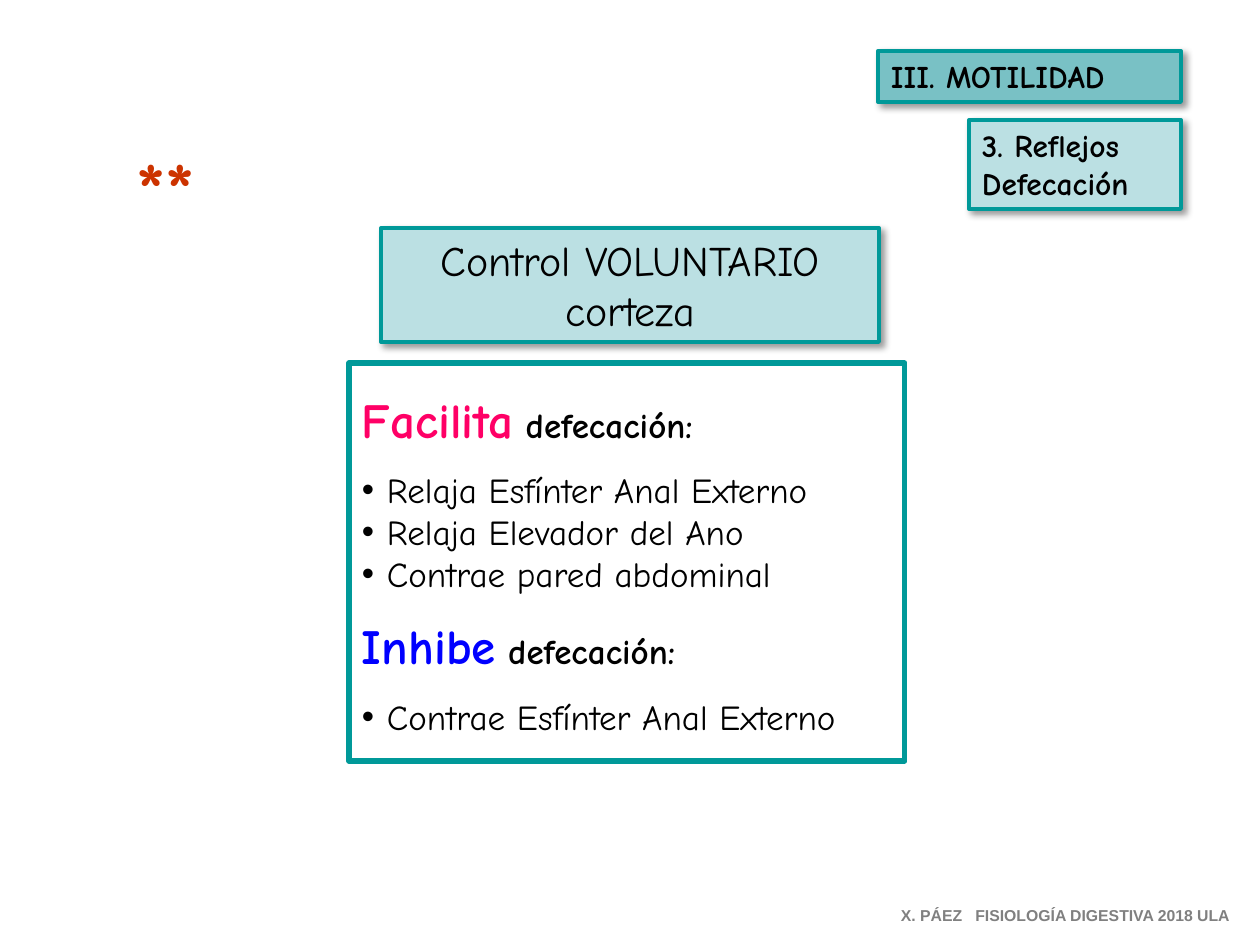
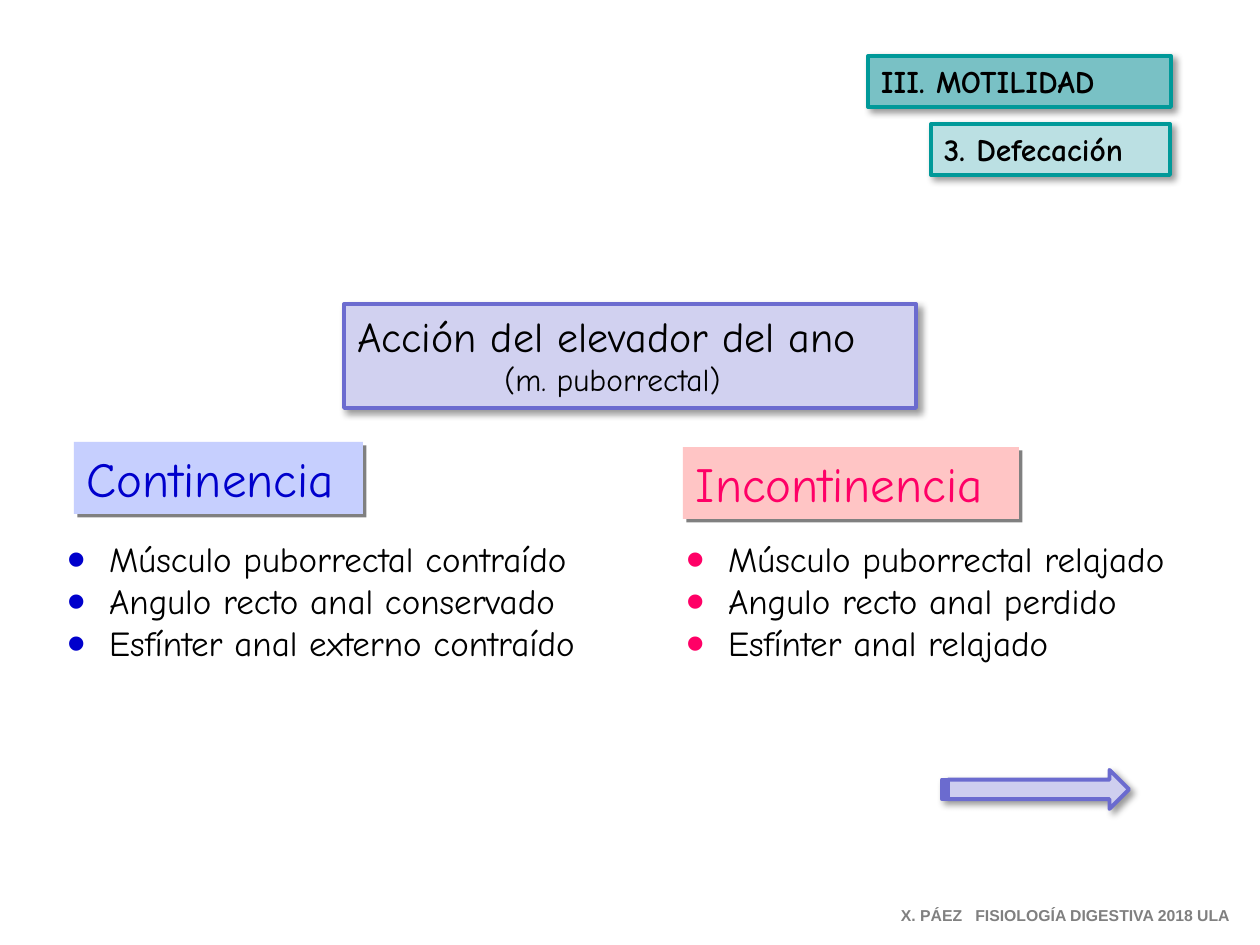
from lxml import etree
from pptx import Presentation
from pptx.dml.color import RGBColor
from pptx.enum.shapes import MSO_SHAPE as Shape
from pptx.enum.text import MSO_ANCHOR, MSO_AUTO_SIZE, PP_ALIGN
from pptx.oxml import parse_xml
from pptx.oxml.ns import nsdecls, qn
from pptx.util import Emu, Pt

PX_PER_INCH = 126
HAND, PLAIN = "Comic Neue", "Arial"

BLACK = RGBColor(0x00, 0x00, 0x00)
GRAY = RGBColor(0x80, 0x80, 0x80)
TEAL = RGBColor(0x00, 0x99, 0x99)
DEEP_AQUA = RGBColor(0x79, 0xC1, 0xC5)
AQUA = RGBColor(0xBB, 0xE0, 0xE3)
VIOLET = RGBColor(0x6B, 0x6B, 0xCF)
LILAC = RGBColor(0xD1, 0xD1, 0xF0)
ARROW_LILAC = RGBColor(0xCE, 0xCE, 0xEF)
PALE_BLUE = RGBColor(0xC6, 0xCF, 0xFE)
PALE_PINK = RGBColor(0xFF, 0xC5, 0xC5)
NAVY = RGBColor(0x00, 0x00, 0xCC)
BLUE = RGBColor(0x00, 0x00, 0xFF)
PINK = RGBColor(0xFF, 0x00, 0x66)
RUST = RGBColor(0xCC, 0x33, 0x00)

# Shadows: colour, opacity %, blur pt, distance pt
SOFT = (BLACK, 40, 4, 3)
HARD = (GRAY, 100, 0, 2.8)

TEAL_FRAME = dict(fill=AQUA, line=TEAL, shadow=SOFT)
CHAPTER_FRAME = dict(TEAL_FRAME, fill=DEEP_AQUA)
VIOLET_FRAME = dict(fill=LILAC, line=VIOLET, shadow=SOFT)

CHAPTER = "III. MOTILIDAD"
FOOTER = "X. PÁEZ   FISIOLOGÍA DIGESTIVA 2018 ULA"
FOOTER_AREA = (888, 900, 366, 31)

# Boxes are left, top, width, height in px
VOLUNTARY = dict(
    chapter=(878, 51, 303, 51),
    section=((969, 120, 212, 89), ["3. Reflejos", "Defecación"]),
    title=(381, 228, 498, 114),
    title_text="Control VOLUNTARIO corteza",
    control=(349, 363, 556, 398),
    effects=[
        ("Facilita", PINK, ["Relaja Esfínter Anal Externo", "Relaja Elevador del Ano",
                            "Contrae pared abdominal"]),
        ("Inhibe", BLUE, ["Contrae Esfínter Anal Externo"]),
    ],
    stars=((123, 135, 107, 105), "**"),
)
LEVATOR = dict(
    chapter=(868, 56, 303, 51),
    section=((931, 124, 239, 51), ["3. Defecación"]),
    title=(344, 304, 572, 104),
    title_lines=[("Acción del elevador del ano", 24, PP_ALIGN.LEFT),
                 ("(m. puborrectal)", 18, PP_ALIGN.CENTER)],
    states=[
        ("Continencia", (74, 442, 289, 72), PALE_BLUE, NAVY, (54, 532, 576, 140),
         ["Músculo puborrectal contraído", "Angulo recto anal conservado",
          "Esfínter anal externo contraído"]),
        ("Incontinencia", (683, 447, 336, 72), PALE_PINK, PINK, (673, 532, 538, 140),
         ["Músculo puborrectal relajado", "Angulo recto anal perdido",
          "Esfínter anal relajado"]),
    ],
    arrow=(942, 770, 187, 39),
)


def px(length):
    return Emu(round(length * 914400 / PX_PER_INCH))


def set_all(target, values):
    for name, value in values.items():
        setattr(target, name, value)


def shadow_effects(color, opacity, blur, distance):
    return parse_xml(
        f'<a:effectLst {nsdecls("a")}><a:outerShdw blurRad="{Pt(blur)}" dist="{Pt(distance)}" '
        f'dir="2700000" algn="tl" rotWithShape="0"><a:srgbClr val="{color}">'
        f'<a:alpha val="{opacity * 1000}"/></a:srgbClr></a:outerShdw></a:effectLst>')


def place(shape, area, fill=None, line=None, shadow=None, weight=2.25):
    """Position a shape, dress its frame and ready its text area."""
    set_all(shape, dict(zip(("left", "top", "width", "height"), map(px, area))))
    if fill is None:
        shape.fill.background()
    else:
        shape.fill.solid()
        shape.fill.fore_color.rgb = fill
    if line is None:
        shape.line.fill.background()
    else:
        shape.line.color.rgb = line
        shape.line.width = Pt(weight)
    if shadow:
        shape._element.spPr.append(shadow_effects(*shadow))
    elif hasattr(shape, "shadow"):
        shape.shadow.inherit = False
    set_all(shape.text_frame, dict(
        word_wrap=True, auto_size=MSO_AUTO_SIZE.NONE, vertical_anchor=MSO_ANCHOR.TOP,
        margin_left=px(13), margin_right=px(13), margin_top=px(6), margin_bottom=px(6)))
    return shape.text_frame


def add_frame(page, area, kind=Shape.RECTANGLE, **look):
    return place(page.shapes.add_shape(kind, 0, 0, 1, 1), area, **look)


def add_label(page, area):
    return place(page.shapes.add_textbox(0, 0, 1, 1), area)


def add_para(frame, text, size, color=BLACK, bold=False, font=HAND, align=PP_ALIGN.LEFT):
    para = frame.paragraphs[0]
    if para.runs:
        para = frame.add_paragraph()
    para.alignment = align
    add_span(para, text, size, color, bold, font)
    return para


def add_span(para, text, size, color=BLACK, bold=False, font=HAND):
    span = para.add_run()
    span.text = text
    set_all(span.font, dict(size=Pt(size), bold=bold, name=font))
    span.font.color.rgb = color


def add_bullet(para, indent, color=BLACK, percent=100):
    props = para._p.get_or_add_pPr()
    props.set("marL", str(px(indent)))
    props.set("indent", str(-px(indent)))
    etree.SubElement(etree.SubElement(props, qn("a:buClr")), qn("a:srgbClr"), val=str(color))
    etree.SubElement(props, qn("a:buSzPct"), val=str(percent * 1000))
    etree.SubElement(props, qn("a:buFont"), typeface=PLAIN)
    etree.SubElement(props, qn("a:buChar"), char="•")


def add_page(deck, content):
    """Add a slide with its chapter and section tags and the footer."""
    page = deck.slides.add_slide(deck.slide_layouts[5])
    add_para(add_frame(page, content["chapter"], **CHAPTER_FRAME), CHAPTER, 18, bold=True)
    area, lines = content["section"]
    section = add_frame(page, area, **TEAL_FRAME)
    for line in lines:
        add_para(section, line, 18, bold=True)
    add_para(add_label(page, FOOTER_AREA), FOOTER, 9, GRAY, True, PLAIN)
    return page


def build_voluntary(deck, content):
    page = add_page(deck, content)
    title = place(page.shapes.title, content["title"], **TEAL_FRAME)
    add_para(title, content["title_text"], 24, align=PP_ALIGN.CENTER)

    control = add_frame(page, content["control"], line=TEAL, weight=3)
    control.margin_top = px(26)
    for index, (effect, color, actions) in enumerate(content["effects"]):
        heading = add_para(control, effect, 28, color, True)
        add_span(heading, " defecación:", 20, bold=True)
        set_all(heading, dict(space_before=Pt(12 if index else 0), space_after=Pt(12)))
        for action in actions:
            add_bullet(add_para(control, action, 20), 25)

    area, text = content["stars"]
    stars = add_para(add_label(page, area), text, 44, RUST, True)
    stars.runs[0].font.fill._xPr.find(qn("a:solidFill")).addnext(
        shadow_effects(BLACK, 100, 0, 3))


def build_levator(deck, content):
    page = add_page(deck, content)
    title = place(page.shapes.title, content["title"], **VIOLET_FRAME)
    title.margin_right = px(48)
    for text, size, align in content["title_lines"]:
        add_para(title, text, size, align=align)

    for name, area, fill, color, list_area, signs in content["states"]:
        add_para(add_frame(page, area, fill=fill, shadow=HARD), name, 28, color)
        sign_list = add_label(page, list_area)
        for sign in signs:
            add_bullet(add_para(sign_list, sign, 20), 42, color, 150)

    add_frame(page, content["arrow"], Shape.STRIPED_RIGHT_ARROW,
              **dict(VIOLET_FRAME, fill=ARROW_LILAC))


def main():
    deck = Presentation()
    set_all(deck, dict(slide_width=px(1260), slide_height=px(945)))
    build_voluntary(deck, VOLUNTARY)
    build_levator(deck, LEVATOR)
    deck.save("out.pptx")


if __name__ == "__main__":
    main()
